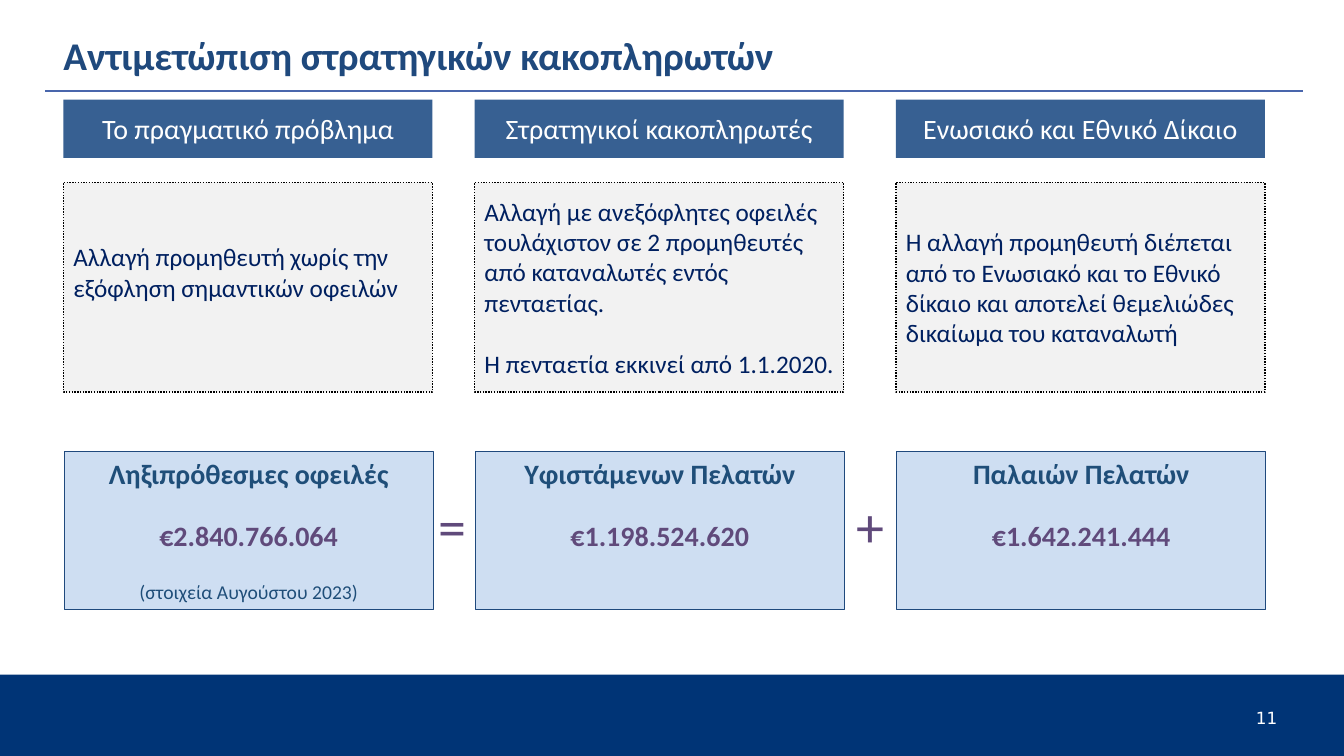
from dataclasses import dataclass

from lxml.etree import SubElement as Sub
from pptx import Presentation as Deck
from pptx.dml.color import RGBColor as Rgb
from pptx.enum.dml import MSO_LINE as Dash
from pptx.enum.shapes import MSO_CONNECTOR as Link, MSO_SHAPE as Kind
from pptx.enum.text import MSO_ANCHOR as Anchor, MSO_AUTO_SIZE as Fit, PP_ALIGN as Align
from pptx.oxml.ns import qn
from pptx.shapes.autoshape import Shape
from pptx.text.text import TextFrame as Frame
from pptx.util import Cm, Pt

COLORS = {
    "white": "FFFFFF", "black": "000000", "band": "003476", "rule": "4966AC",
    "title": "1F497D", "head": "376092", "gray": "F2F2F2", "navy": "002060",
    "pale": "C6D9F1", "label": "1F4E79", "plum": "604A7B",
}


@dataclass
class Line:
    text: str
    size: float
    color: str
    bold: bool = False
    font: str = "Calibri"


@dataclass
class Column:
    left: float
    head: str
    body: list[str]
    label: str
    amount: str
    note: str = ""
    foot: float = 0.13  # bottom inset of the body box


@dataclass
class Sign:
    left: float
    text: str


COLUMNS = [
    Column(1.6, "Το πραγματικό πρόβλημα",
           ["Αλλαγή προμηθευτή χωρίς την εξόφληση σημαντικών οφειλών"],
           "Ληξιπρόθεσμες οφειλές", "€2.840.766.064", "(στοιχεία Αυγούστου 2023)", 0.9),
    Column(11.96, "Στρατηγικοί κακοπληρωτές",
           ["Αλλαγή με ανεξόφλητες οφειλές τουλάχιστον σε 2 προμηθευτές από "
            "καταναλωτές εντός πενταετίας.",
            "Η πενταετία εκκινεί από 1.1.2020."],
           "Υφιστάμενων Πελατών", "€1.198.524.620"),
    Column(22.58, "Ενωσιακό και Εθνικό Δίκαιο",
           ["Η αλλαγή προμηθευτή διέπεται από το Ενωσιακό και το Εθνικό δίκαιο "
            "και αποτελεί θεμελιώδες δικαίωμα του καταναλωτή"],
           "Παλαιών Πελατών", "€1.642.241.444"),
]
SIGNS = [Sign(10.54, "="), Sign(21.08, "+")]
WIDE = 9.3


def tint(name: str) -> Rgb:
    return Rgb.from_string(COLORS[name])


def draw(left: float, top: float, width: float, height: float, fill: str,
         edge: str = "", weight: float = 1) -> Shape:
    box = slide.shapes.add_shape(Kind.RECTANGLE, Cm(left), Cm(top), Cm(width), Cm(height))
    box.shadow.inherit = False
    box.fill.solid()
    box.fill.fore_color.rgb = tint(fill)
    if edge:
        box.line.color.rgb = tint(edge)
        box.line.width = Pt(weight)
    else:
        box.line.fill.background()
    return box


def inset(frame: Frame, size: float) -> None:
    frame.margin_left = frame.margin_right = Cm(size)
    frame.margin_top = frame.margin_bottom = Cm(size)


def write(frame: Frame, lines: list[Line], align: Align = Align.CENTER,
          anchor: Anchor = Anchor.MIDDLE, before: float = 0, after: float = 0) -> None:
    frame.word_wrap = True
    frame.auto_size = Fit.NONE
    frame.vertical_anchor = anchor
    for rank, line in enumerate(lines):
        para = frame.add_paragraph() if rank else frame.paragraphs[0]
        para.alignment = align
        para.space_before = Pt(before if rank else 0)
        para.space_after = Pt(after)
        run = para.add_run()
        run.text = line.text
        run.font.name = line.font
        run.font.size = Pt(line.size)
        run.font.bold = line.bold
        run.font.color.rgb = tint(line.color)


def stack(col: Column) -> None:
    # Body box
    body = draw(col.left, 4.6, WIDE, 5.28, "gray", "black")
    body.line.dash_style = Dash.ROUND_DOT
    body.text_frame.margin_right = Cm(0.1)
    body.text_frame.margin_bottom = Cm(col.foot)
    write(body.text_frame, [Line(text, 18, "navy") for text in col.body],
          Align.LEFT, before=22)
    # Heading
    head = draw(col.left, 2.51, WIDE, 1.47, "head")
    inset(head.text_frame, 0.25)
    write(head.text_frame, [Line(col.head, 20, "white")])
    # Amount box
    total = draw(col.left + 0.02, 11.38, WIDE, 3.99, "pale", "title", 0.75)
    shade = total.fill._xPr.find(qn("a:solidFill"))[0]
    Sub(shade, qn("a:alpha"), val="86000")
    lines = [Line(col.label, 20, "label", True), Line(col.amount, 20, "plum", True)]
    if col.note:
        lines.append(Line(col.note, 14, "label"))
    write(total.text_frame, lines, anchor=Anchor.TOP, before=12, after=8)


deck = Deck()
deck.slide_width, deck.slide_height = Cm(33.87), Cm(19.05)
slide = deck.slides.add_slide(deck.slide_layouts[5])

# Footer band and title rule
draw(0, 17, 33.87, 2.05, "band")
rule = slide.shapes.add_connector(Link.STRAIGHT, Cm(1.14), Cm(2.29), Cm(32.84), Cm(2.29))
rule.line.color.rgb = tint("rule")
rule.line.width = Pt(0.96)
Sub(rule._element.spPr, qn("a:effectLst"))

# Title
title = slide.shapes.title
title.left, title.top, title.width, title.height = Cm(1.6), Cm(0.64), Cm(31.6), Cm(1.47)
inset(title.text_frame, 0)
write(title.text_frame, [Line("Αντιμετώπιση στρατηγικών κακοπληρωτών", 28, "title", True)],
      Align.LEFT)

# Signs between the amounts
for sign in SIGNS:
    mark = draw(sign.left, 12.27, 1.7, 1.96, "white")
    write(mark.text_frame, [Line(sign.text, 40, "plum")], anchor=Anchor.TOP)

# Columns
for col in COLUMNS:
    stack(col)

# Page number
page = slide.shapes.add_textbox(Cm(31.65), Cm(17.9), Cm(1.07), Cm(0.36)).text_frame
inset(page, 0)
write(page, [Line("11", 12, "white", font="DejaVu Sans")], Align.LEFT, Anchor.TOP)
page.paragraphs[0].line_spacing = 0.87

deck.save("out.pptx")
